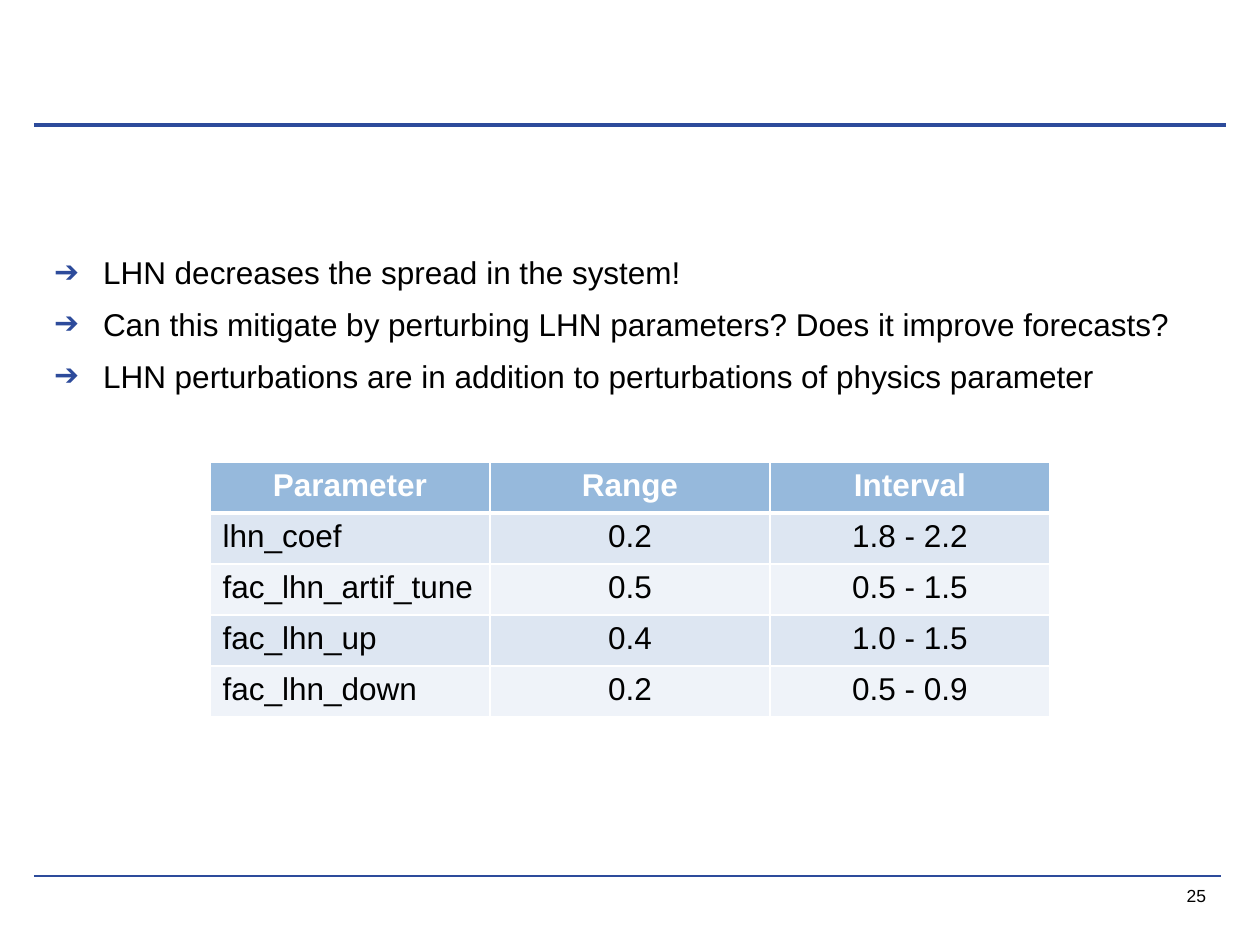
import pptx
import pptx.util
import pptx.oxml
from lxml import etree
from pptx.dml.color import RGBColor
from pptx.enum.shapes import MSO_CONNECTOR
from pptx.enum.text import MSO_ANCHOR, MSO_AUTO_SIZE, PP_ALIGN
from pptx.oxml.ns import qn

BLUE = RGBColor(0x2D, 0x4B, 0x9B)
BLACK = RGBColor(0, 0, 0)
WHITE = RGBColor(0xFF, 0xFF, 0xFF)
HEADER_FILL = RGBColor(0x96, 0xB9, 0xDC)
BAND_FILLS = [RGBColor(0xEF, 0xF3, 0xF9), RGBColor(0xDD, 0xE6, 0xF2)]


def px(length):
    return pptx.util.Emu(round(length * 914400 / 126))


def style_font(font, size, color):
    font.name = "Arial"
    font.size = pptx.util.Pt(size)
    font.color.rgb = color


presentation = pptx.Presentation()
presentation.slide_width = px(1260)
presentation.slide_height = px(945)
slide = presentation.slides.add_slide(presentation.slide_layouts[1])
title = slide.shapes.title
title.element.getparent().remove(title.element)

for y, right, width in [(876, 1221, 1.2), (125, 1226, 2)]:
    rule = slide.shapes.add_connector(
        MSO_CONNECTOR.STRAIGHT, px(34), px(y), px(right), px(y))
    rule.line.color.rgb = BLUE
    rule.line.width = pptx.util.Pt(width)
    etree.SubElement(rule.element.spPr, qn("a:effectLst"))

body = slide.placeholders[1]
body.left, body.top, body.width, body.height = px(54), px(253), px(1152), px(595)
body_frame = body.text_frame
body_frame.auto_size = MSO_AUTO_SIZE.NONE
body_frame.vertical_anchor = MSO_ANCHOR.TOP
body_frame.margin_left = body_frame.margin_right = 0
body_frame.margin_top = body_frame.margin_bottom = 0
body_frame.text = "\n".join([
    "LHN decreases the spread in the system!",
    "Can this mitigate by perturbing LHN parameters? Does it improve forecasts?",
    "LHN perturbations are in addition to perturbations of physics parameter",
])
for index, paragraph in enumerate(body_frame.paragraphs):
    paragraph.space_before = pptx.util.Pt(8 if index else 0)
    properties = paragraph._p.get_or_add_pPr()
    properties.set("marL", str(px(49)))
    properties.set("indent", str(px(-49)))
    bullet_color = etree.SubElement(properties, qn("a:buClr"))
    etree.SubElement(bullet_color, qn("a:srgbClr"), val=str(BLUE))
    etree.SubElement(properties, qn("a:buSzPct"), val="95000")
    etree.SubElement(properties, qn("a:buFont"), typeface="Arial")
    etree.SubElement(properties, qn("a:buChar"), char="➔")
    style_font(paragraph.font, 18, BLACK)

page_number = slide.shapes.add_textbox(px(1142), px(880), px(64), px(30))
page_frame = page_number.text_frame
page_frame.word_wrap = True
page_frame.vertical_anchor = MSO_ANCHOR.MIDDLE
page_frame.margin_left = page_frame.margin_right = 0
page_frame.margin_top = page_frame.margin_bottom = 0
page_frame.text = "25"
page_frame.paragraphs[0].alignment = PP_ALIGN.RIGHT
style_font(page_frame.paragraphs[0].font, 10, BLACK)

rows = [
    ("Parameter", "Range", "Interval"),
    ("lhn_coef", "0.2", "1.8 - 2.2"),
    ("fac_lhn_artif_tune", "0.5", "0.5 - 1.5"),
    ("fac_lhn_up", "0.4", "1.0 - 1.5"),
    ("fac_lhn_down", "0.2", "0.5 - 0.9"),
]
table = slide.shapes.add_table(
    len(rows), 3, px(210), px(462), px(840), px(255)).table
for row_index, row in enumerate(rows):
    header = row_index == 0
    for column_index, text in enumerate(row):
        cell = table.cell(row_index, column_index)
        cell.text = text
        paragraph = cell.text_frame.paragraphs[0]
        centered = header or column_index > 0
        paragraph.alignment = PP_ALIGN.CENTER if centered else PP_ALIGN.LEFT
        style_font(paragraph.font, 18, WHITE if header else BLACK)
        paragraph.font.bold = header
        cell.fill.solid()
        cell.fill.fore_color.rgb = HEADER_FILL if header else BAND_FILLS[row_index % 2]
        cell_properties = cell._tc.get_or_add_tcPr()
        for position, side in enumerate("LRTB"):
            thick = (header and side == "B") or (row_index == 1 and side == "T")
            border = etree.Element(
                qn(f"a:ln{side}"), w=str(pptx.util.Pt(3 if thick else 1)))
            border_fill = etree.SubElement(border, qn("a:solidFill"))
            etree.SubElement(border_fill, qn("a:srgbClr"), val=str(WHITE))
            cell_properties.insert(position, border)

presentation.save("out.pptx")
